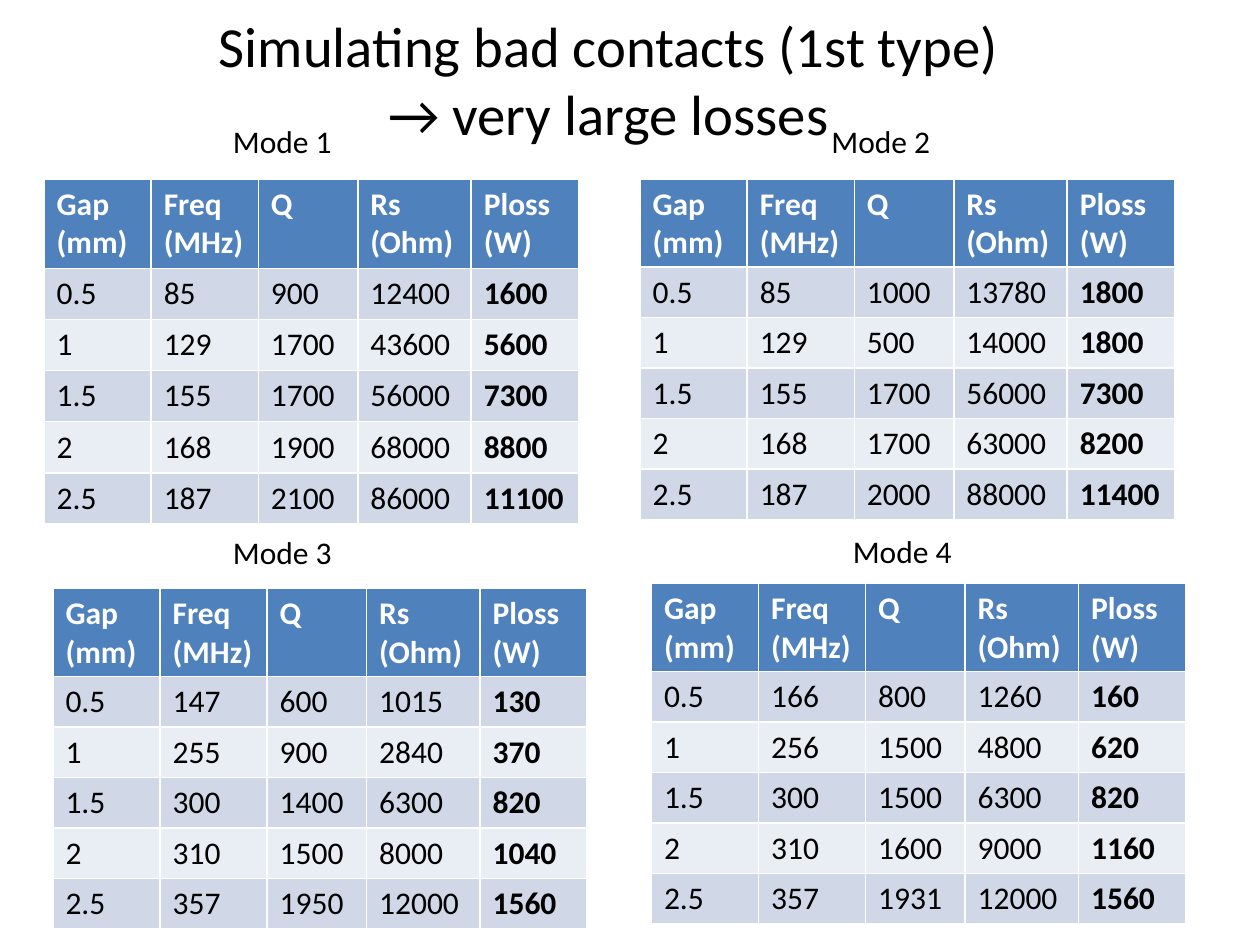
import pptx
import pptx.util
import pptx.dml.color
import pptx.enum.text

Inches = pptx.util.Inches
TITLE = "Simulating bad contacts (1st type)\v→ very large losses"
HEAD = ["Gap (mm)", "Freq (MHz)", "Q", "Rs (Ohm)", "Ploss (W)"]
GAPS = [0.5, 1, 1.5, 2, 2.5]
WIDTHS = [0.85, 0.85, 0.79, 0.9, 0.85]
HEAD_H, ROW_H, TABLE_H = 0.58, 0.35, 2.7
BLUE, DARK, PALE = "4F81BD", "D0D8E8", "E9EDF4"

# name, label corner, table corner, columns after the gap
MODES = [
    ("Mode 1", (1.75, 0.92), (0.35, 1.42), [
        [85, 129, 155, 168, 187],
        [900, 1700, 1700, 1900, 2100],
        [12400, 43600, 56000, 68000, 86000],
        [1600, 5600, 7300, 8800, 11100]]),
    ("Mode 2", (6.5, 0.92), (5.08, 1.42), [
        [85, 129, 155, 168, 187],
        [1000, 500, 1700, 1700, 2000],
        [13780, 14000, 56000, 63000, 88000],
        [1800, 1800, 7300, 8200, 11400]]),
    ("Mode 3", (1.75, 4.18), (0.42, 4.67), [
        [147, 255, 300, 310, 357],
        [600, 900, 1400, 1500, 1950],
        [1015, 2840, 6300, 8000, 12000],
        [130, 370, 820, 1040, 1560]]),
    ("Mode 4", (6.67, 4.17), (5.17, 4.63), [
        [166, 256, 300, 310, 357],
        [800, 1500, 1500, 1600, 1931],
        [1260, 4800, 6300, 9000, 12000],
        [160, 620, 820, 1160, 1560]]),
]


def rgb(code):
    return pptx.dml.color.RGBColor.from_string(code)


def style(frame, size=18, color="000000", bold=False):
    for para in frame.paragraphs:
        for run in para.runs:
            run.font.name = "Calibri"
            run.font.size = pptx.util.Pt(size)
            run.font.bold = bold
            run.font.color.rgb = rgb(color)


def add_title(slide):
    title = slide.shapes.title
    title.left, title.top = Inches(0.33), Inches(0)
    title.width, title.height = Inches(9), Inches(1.25)
    frame = title.text_frame
    frame.text = TITLE
    frame.auto_size = pptx.enum.text.MSO_AUTO_SIZE.NONE
    frame.vertical_anchor = pptx.enum.text.MSO_ANCHOR.MIDDLE
    frame.paragraphs[0].alignment = pptx.enum.text.PP_ALIGN.CENTER
    style(frame, 32.4)


def add_label(slide, name, left, top):
    box = slide.shapes.add_textbox(Inches(left), Inches(top), Inches(1), Inches(0.4))
    frame = box.text_frame
    frame.text = name
    frame.word_wrap = False
    frame.auto_size = pptx.enum.text.MSO_AUTO_SIZE.SHAPE_TO_FIT_TEXT
    style(frame)


def add_grid(slide, left, top, columns):
    rows = [HEAD, *zip(GAPS, *columns)]
    shape = slide.shapes.add_table(
        len(rows), len(HEAD), Inches(left), Inches(top),
        Inches(sum(WIDTHS)), Inches(TABLE_H))
    table = shape.table
    for col, width in zip(table.columns, WIDTHS):
        col.width = Inches(width)
    for r, row in enumerate(rows):
        table.rows[r].height = Inches(ROW_H if r else HEAD_H)
        fill = BLUE if r == 0 else DARK if r % 2 else PALE
        for c, value in enumerate(row):
            cell = table.cell(r, c)
            cell.text = str(value)
            cell.fill.solid()
            cell.fill.fore_color.rgb = rgb(fill)
            style(cell.text_frame, color="000000" if r else "FFFFFF",
                  bold=r == 0 or c == len(HEAD) - 1)
    shape.height = Inches(TABLE_H)


def main():
    deck = pptx.Presentation()
    deck.slide_width, deck.slide_height = Inches(10), Inches(7.5)
    slide = deck.slides.add_slide(deck.slide_layouts[5])
    add_title(slide)
    for name, label, corner, columns in MODES:
        add_grid(slide, *corner, columns)
        add_label(slide, name, *label)
    deck.save("out.pptx")


if __name__ == "__main__":
    main()
